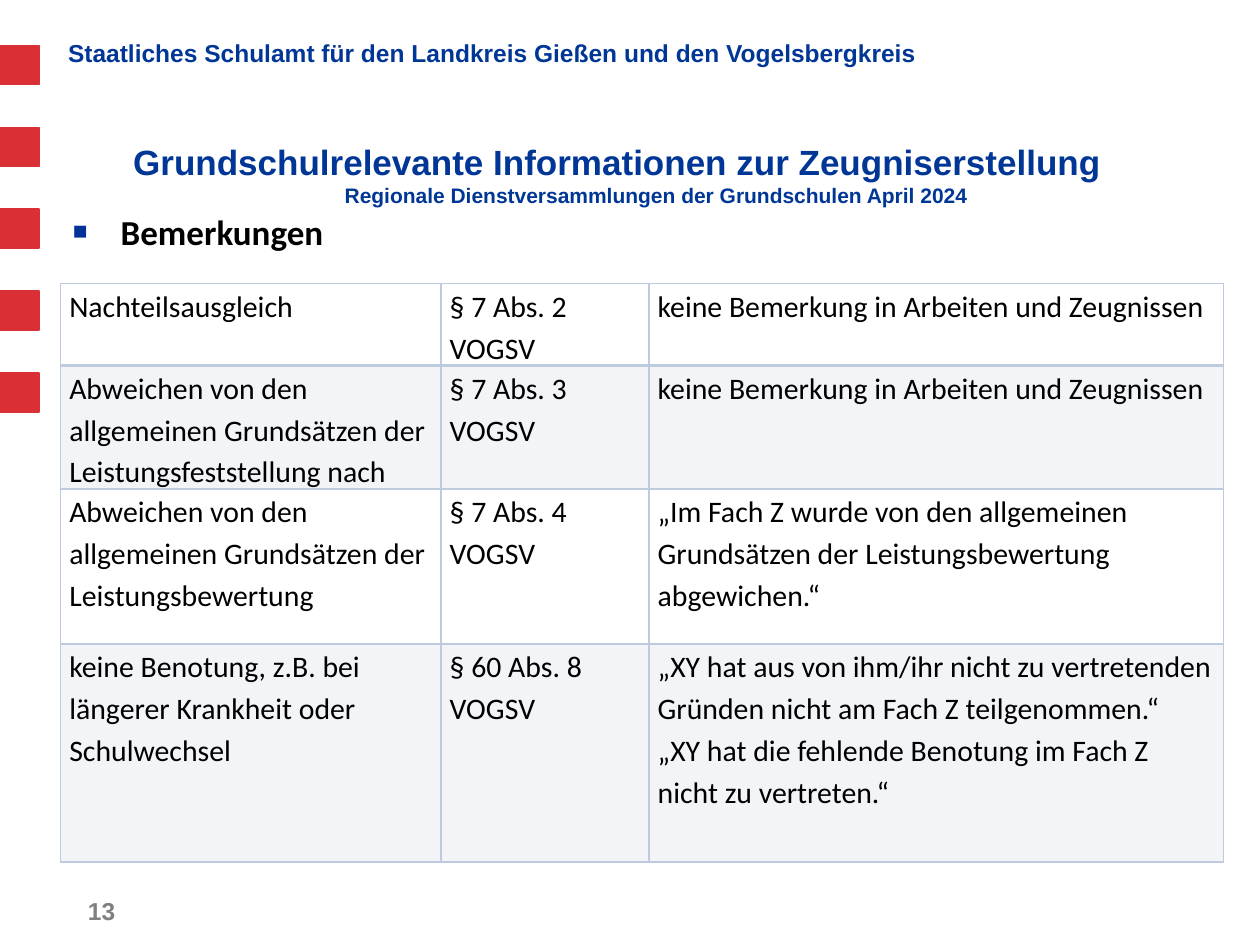
from pptx import Presentation
from pptx.dml.color import RGBColor
from pptx.enum.shapes import MSO_SHAPE
from pptx.enum.text import MSO_ANCHOR, PP_ALIGN
from pptx.oxml.ns import qn
from pptx.util import Inches, Pt
from lxml import etree

RECT = MSO_SHAPE.RECTANGLE
TOP, BOTTOM = MSO_ANCHOR.TOP, MSO_ANCHOR.BOTTOM
LEFT, CENTER = PP_ALIGN.LEFT, PP_ALIGN.CENTER

RED = RGBColor(0xDB, 0x2F, 0x36)
BLUE = RGBColor(0x00, 0x36, 0x95)
MARK = RGBColor(0x00, 0x33, 0x99)
GRAY = RGBColor(0x80, 0x80, 0x80)
BLACK = RGBColor(0, 0, 0)
PALE = RGBColor(0xBE, 0xCB, 0xDF)

ROWS = [
    ["Nachteilsausgleich", "§ 7 Abs. 2 VOGSV",
     "keine Bemerkung in Arbeiten und Zeugnissen"],
    ["Abweichen von den allgemeinen Grundsätzen der Leistungsfeststellung nach",
     "§ 7 Abs. 3 VOGSV", "keine Bemerkung in Arbeiten und Zeugnissen"],
    ["Abweichen von den allgemeinen Grundsätzen der Leistungsbewertung",
     "§ 7 Abs. 4 VOGSV",
     "„Im Fach Z wurde von den allgemeinen Grundsätzen der "
     "Leistungsbewertung abgewichen.“"],
    ["keine Benotung, z.B. bei längerer Krankheit oder Schulwechsel",
     "§ 60 Abs. 8 VOGSV",
     "„XY hat aus von ihm/ihr nicht zu vertretenden Gründen nicht am "
     "Fach Z teilgenommen.“\n"
     "„XY hat die fehlende Benotung im Fach Z nicht zu vertreten.“"],
]
COLS = [3.02, 1.65, 4.56]
HEIGHTS = [0.62, 0.98, 1.23, 1.73]


def add(parent, tag, **attrs):
    return etree.SubElement(parent, qn(tag), attrs)


def add_color(parent, color, alpha=None):
    node = add(parent, "a:srgbClr", val=str(color))
    if alpha:
        add(node, "a:alpha", val=str(alpha * 1000))


def write(frame, text, size=14, font="Arial", color=BLUE, bold=True,
          align=LEFT, space=None, indent=0, bullet=None, more=False):
    """Fill the frame with one paragraph per line; more=True appends."""
    for i, line in enumerate(text.split("\n")):
        para = frame.add_paragraph() if more or i else frame.paragraphs[0]
        props = para._p.get_or_add_pPr()
        if indent:
            props.set("marL", str(Inches(indent)))
        if bullet:
            props.set("indent", str(-Inches(indent)))
            add_color(add(props, "a:buClr"), MARK)
            add(props, "a:buSzPct", val="70000")
            add(props, "a:buFont", typeface="Arial")
            add(props, "a:buChar", char=bullet)
        para.alignment = align
        if space:
            para.line_spacing = space
        run = para.add_run()
        run.text = line
        run.font.size, run.font.name = Pt(size), font
        run.font.bold, run.font.color.rgb = bold, color


def add_box(slide, box, side=0.1, edge=0.05, anchor=TOP):
    frame = slide.shapes.add_textbox(*map(Inches, box)).text_frame
    frame.word_wrap = True
    frame.margin_left = frame.margin_right = Inches(side)
    frame.margin_top = frame.margin_bottom = Inches(edge)
    frame.vertical_anchor = anchor
    return frame


def add_strip(slide, left, top, side, step, count):
    """Column of equal squares along the slide's edge."""
    for i in range(count):
        shape = slide.shapes.add_shape(
            RECT, Inches(left), Inches(top + i * step),
            Inches(side), Inches(side))
        shape.shadow.inherit = False
        shape.fill.solid()
        shape.fill.fore_color.rgb = shape.line.color.rgb = RED
        shape.line.width = Pt(0.75)


def add_title(slide, box):
    frame = add_box(slide, box, edge=0, anchor=BOTTOM)
    write(frame, "Grundschulrelevante Informationen zur Zeugniserstellung",
          size=20, align=CENTER)
    write(frame, "Regionale Dienstversammlungen der Grundschulen April 2024",
          size=12, align=CENTER, indent=0.62, more=True)


def style_cell(cell, first, shaded):
    cell.margin_left = cell.margin_right = Inches(0.07)
    cell.margin_top = cell.margin_bottom = 0
    props = cell._tc.get_or_add_tcPr()
    for side in "LRTB":
        width = 2 if first and side == "B" else 1
        line = add(props, "a:ln" + side, w=str(Pt(width)))
        add_color(add(line, "a:solidFill"), PALE)
    if shaded:
        add_color(add(props, "a:solidFill"), PALE, alpha=20)
    else:
        cell.fill.background()


def add_rules(slide, box):
    """Table of remarks with every second row shaded."""
    table = slide.shapes.add_table(
        len(ROWS), len(COLS), *map(Inches, box)).table
    table.first_row = table.horz_banding = False
    for col, width in zip(table.columns, COLS):
        col.width = Inches(width)
    for r, (texts, height) in enumerate(zip(ROWS, HEIGHTS)):
        table.rows[r].height = Inches(height)
        for c, text in enumerate(texts):
            cell = table.cell(r, c)
            style_cell(cell, r == 0, r % 2 == 1)
            write(cell.text_frame, text, size=17, font="Calibri",
                  color=BLACK, bold=False, space=1.15)


def main():
    deck = Presentation()
    deck.slide_width, deck.slide_height = Inches(10), Inches(7.5)
    slide = deck.slides.add_slide(deck.slide_layouts[6])

    # Frame of the slide: squares and office name
    add_strip(slide, 0, 0.36, 0.31, 0.65, 5)
    write(add_box(slide, (0.54, 0.28, 8.03, 0.49), side=0),
          "Staatliches Schulamt für den Landkreis Gießen und den "
          "Vogelsbergkreis", space=0.9)

    # Title, topic and page number
    add_title(slide, (0.6, 0.76, 8.6, 0.89))
    write(add_box(slide, (0.48, 1.62, 9.2, 5.24)), "Bemerkungen", size=20,
          font="Calibri", color=BLACK, indent=0.38, bullet="■")
    write(add_box(slide, (0.6, 7.06, 0.77, 0.33)), "13", color=GRAY)

    # Table
    add_rules(slide, (0.48, 2.25, sum(COLS), sum(HEIGHTS)))
    deck.save("out.pptx")


if __name__ == "__main__":
    main()
